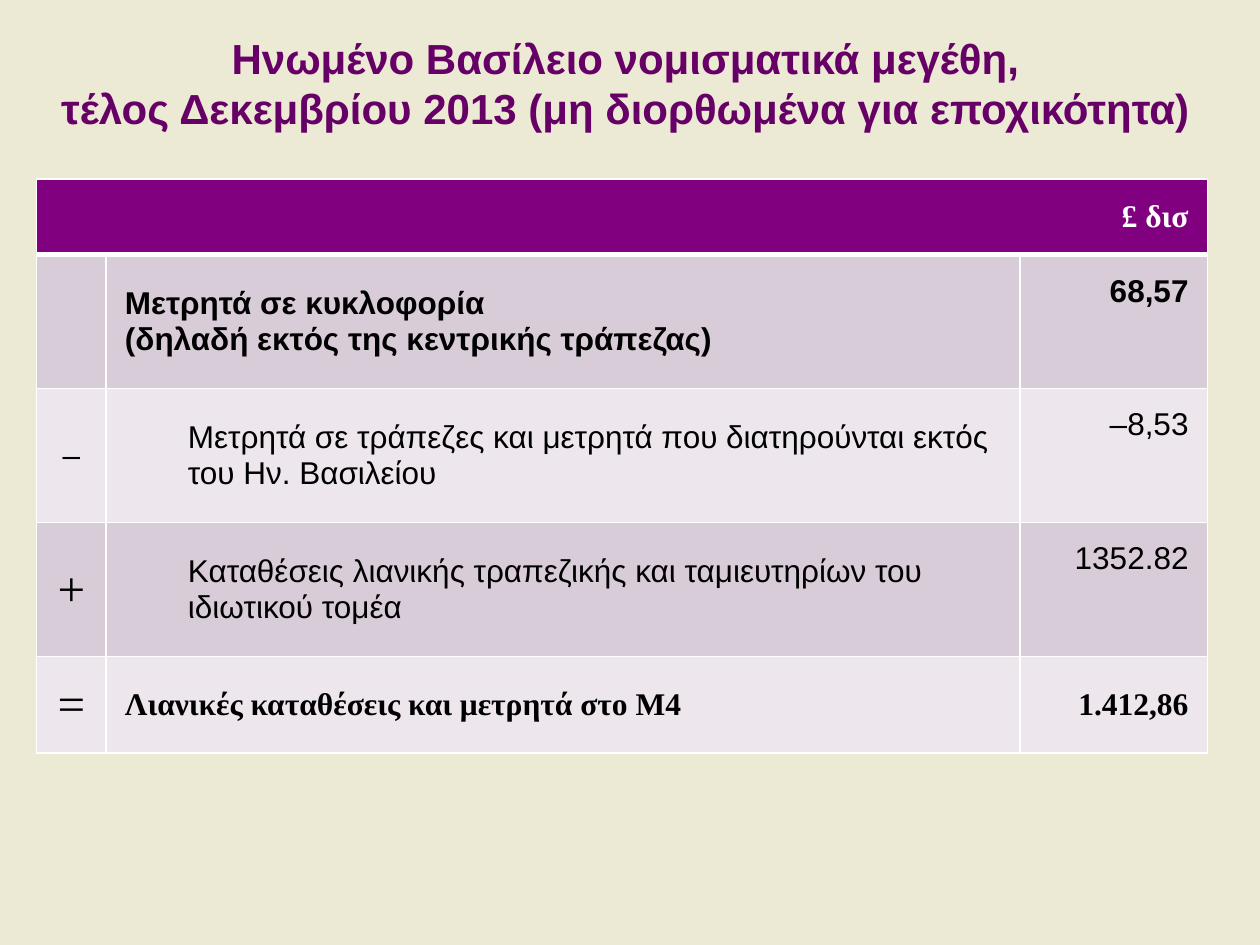
from dataclasses import dataclass

from lxml import etree
from pptx import Presentation
from pptx.dml.color import RGBColor
from pptx.enum.text import MSO_ANCHOR, MSO_AUTO_SIZE, PP_ALIGN
from pptx.oxml.ns import qn
from pptx.util import Cm, Pt

LEFT, CENTER, RIGHT = PP_ALIGN.LEFT, PP_ALIGN.CENTER, PP_ALIGN.RIGHT
TOP, MIDDLE = MSO_ANCHOR.TOP, MSO_ANCHOR.MIDDLE


@dataclass(frozen=True)
class Theme:
    background: str = "ECE9D5"
    title: str = "660066"
    header: str = "800080"
    band_dark: str = "D8CCD8"
    band_light: str = "EDE7ED"
    ink: str = "000000"
    white: str = "FFFFFF"
    sans: str = "Arial"
    serif: str = "Times New Roman"
    title_size: int = 24
    body_size: int = 18
    sign_size: int = 28


THEME = Theme()

COLUMN_WIDTHS = (1.4, 18.42, 3.78)
ROW_HEIGHTS = (1.5, 2.7, 2.7, 2.7, 1.95)
CELL_MARGIN = Cm(0.38)
ITEM_INDENT = Cm(1.27)

BODY = {"name": THEME.sans, "size": Pt(THEME.body_size), "bold": False}
STRONG = {**BODY, "bold": True}
TOTAL = {**STRONG, "name": THEME.serif}
SIGN = {**BODY, "name": THEME.serif, "size": Pt(THEME.sign_size)}

# Sign, label, value, sign format, text format, indent, value anchor
ROWS = (
    ("", "Μετρητά σε κυκλοφορία\n(δηλαδή εκτός της κεντρικής τράπεζας)",
     "68,57", BODY, STRONG, 0, TOP),
    ("–", "Μετρητά σε τράπεζες και μετρητά που διατηρούνται εκτός του Ην. Βασιλείου",
     "–8,53", BODY, BODY, ITEM_INDENT, TOP),
    ("+", "Καταθέσεις λιανικής τραπεζικής και ταμιευτηρίων του ιδιωτικού τομέα",
     "1352.82", SIGN, BODY, ITEM_INDENT, TOP),
    ("=", "Λιανικές καταθέσεις και μετρητά στο Μ4",
     "1.412,86", SIGN, TOTAL, 0, MIDDLE),
)


def write(frame, text, font, color, align, indent=0):
    """Fill the first paragraph, with a line break between lines."""
    para = frame.paragraphs[0]
    para.alignment = align
    if indent:
        para.level = 1
        properties = para._p.get_or_add_pPr()
        properties.set("marL", str(indent))
        properties.set("indent", "0")
    for number, line in enumerate(text.split("\n")):
        if number:
            para.add_line_break()
        span = para.add_run()
        span.text = line
        for name, value in font.items():
            setattr(span.font, name, value)
        span.font.color.rgb = RGBColor.from_string(color)
    return para


def add_text_shadow(span):
    effects = etree.Element(qn("a:effectLst"))
    shadow = etree.SubElement(effects, qn("a:outerShdw"), blurRad="38100",
                              dist="38100", dir="2700000", algn="tl")
    etree.SubElement(shadow, qn("a:srgbClr"), val=THEME.ink)
    span.font._element.find(qn("a:solidFill")).addnext(effects)


def set_borders(cell, bottom=1):
    properties = cell._tc.get_or_add_tcPr()
    widths = {"lnL": 1, "lnR": 1, "lnT": 1, "lnB": bottom}
    for position, (side, width) in enumerate(widths.items()):
        line = etree.Element(qn(f"a:{side}"), w=str(Pt(width)))
        fill = etree.SubElement(line, qn("a:solidFill"))
        etree.SubElement(fill, qn("a:srgbClr"), val=THEME.white)
        properties.insert(position, line)


def style_cell(cell, color, anchor=MIDDLE, bottom=1):
    for side in ("left", "right", "top", "bottom"):
        setattr(cell, f"margin_{side}", CELL_MARGIN)
    cell.vertical_anchor = anchor
    cell.fill.solid()
    cell.fill.fore_color.rgb = RGBColor.from_string(color)
    set_borders(cell, bottom)


def add_title(page, left, top, width, height):
    box = page.shapes.add_textbox(left, top, width, height)
    frame = box.text_frame
    frame.word_wrap = True
    frame.auto_size = MSO_AUTO_SIZE.SHAPE_TO_FIT_TEXT
    text = ("Ηνωμένο Βασίλειο νομισματικά μεγέθη,\n"
            "τέλος Δεκεμβρίου 2013 (μη διορθωμένα για εποχικότητα)")
    font = {**STRONG, "size": Pt(THEME.title_size)}
    para = write(frame, text, font, THEME.title, CENTER)
    for span in para.runs:
        add_text_shadow(span)


def add_money_table(page, left, top):
    table = page.shapes.add_table(
        len(ROW_HEIGHTS), len(COLUMN_WIDTHS), left, top,
        Cm(sum(COLUMN_WIDTHS)), Cm(sum(ROW_HEIGHTS))).table
    for column, width in zip(table.columns, COLUMN_WIDTHS):
        column.width = Cm(width)
    for row, height in zip(table.rows, ROW_HEIGHTS):
        row.height = Cm(height)

    # Header across all columns
    header = table.cell(0, 0)
    header.merge(table.cell(0, len(COLUMN_WIDTHS) - 1))
    for cell in table.rows[0].cells:
        style_cell(cell, THEME.header, bottom=3)
    write(header.text_frame, "£ δισ", TOTAL, THEME.white, RIGHT)

    # Banded body rows
    bands = (THEME.band_dark, THEME.band_light)
    for index, (sign, label, value, sign_font, font, indent, anchor) in enumerate(ROWS):
        parts = (
            (sign, sign_font, CENTER, 0, MIDDLE),
            (label, font, LEFT, indent, MIDDLE),
            (value, font, RIGHT, 0, anchor),
        )
        for cell, (text, style, align, inset, place) in zip(
                table.rows[index + 1].cells, parts):
            style_cell(cell, bands[index % 2], place)
            write(cell.text_frame, text, style, THEME.ink, align, inset)


def main():
    deck = Presentation()
    deck.slide_width, deck.slide_height = Cm(25.4), Cm(19.05)
    page = deck.slides.add_slide(deck.slide_layouts[6])
    page.background.fill.solid()
    page.background.fill.fore_color.rgb = RGBColor.from_string(THEME.background)
    add_title(page, Cm(0), Cm(0.53), Cm(25.22), Cm(2.31))
    add_money_table(page, Cm(0.74), Cm(3.61))
    deck.save("out.pptx")


if __name__ == "__main__":
    main()
